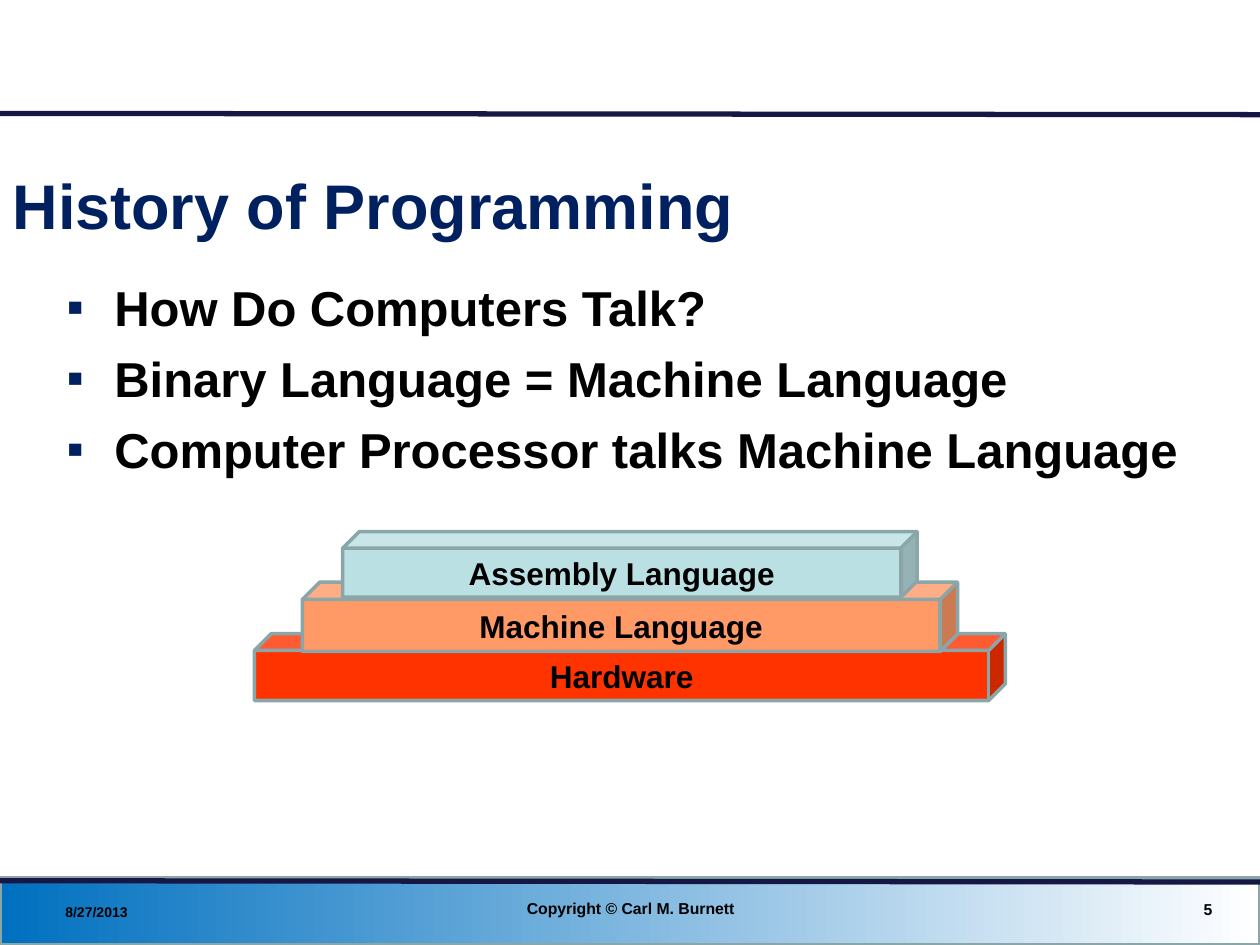
from dataclasses import dataclass

from lxml.etree import SubElement
from pptx import Presentation
from pptx.dml.color import RGBColor as RGB
from pptx.enum.shapes import MSO_CONNECTOR as CONN, MSO_SHAPE as SHAPE
from pptx.enum.text import MSO_ANCHOR as ANCHOR, PP_ALIGN as ALIGN
from pptx.oxml.ns import qn
from pptx.util import Inches, Pt


@dataclass(frozen=True)
class Theme:
    """Colours, font and type sizes of the slide."""
    font: str = "Arial"
    navy: str = "002060"
    rule: str = "171745"
    edge: str = "8AA6A8"
    band: tuple = ("0070C0", "FFFFFF")
    ink: str = "000000"
    title: int = 36
    body: int = 28
    label: int = 18
    footer: int = 9
    date: int = 8


THEME = Theme()
COLS, ROWS = 100, 75
WIDTH, HEIGHT = Inches(10), Inches(7.5)


def grid(x, y, w, h):
    """Turn columns and rows into slide lengths."""
    col, row = WIDTH / COLS, HEIGHT / ROWS
    return int(x * col), int(y * row), int(w * col), int(h * row)


def write(s, *lines, size, color=THEME.ink, align=ALIGN.LEFT,
          anchor=ANCHOR.MIDDLE, bullet=None, gap=0):
    """Fill a shape with bold paragraphs."""
    tf = s.text_frame
    tf.word_wrap = True
    tf.vertical_anchor = anchor
    for i, text in enumerate(lines):
        p = tf.paragraphs[0] if i == 0 else tf.add_paragraph()
        if bullet:
            add_bullet(p, bullet)
        p.alignment = align
        if i:
            p.space_before = Pt(gap)
        r = p.add_run()
        r.text = text
        r.font.name, r.font.size, r.font.bold = THEME.font, Pt(size), True
        r.font.color.rgb = RGB.from_string(color)


def add_bullet(p, char):
    """Give a paragraph a hanging navy bullet."""
    pPr = p._p.get_or_add_pPr()
    pPr.set("marL", str(Inches(0.38)))
    pPr.set("indent", str(-Inches(0.38)))
    clr = SubElement(pPr, qn("a:buClr"))
    SubElement(clr, qn("a:srgbClr"), val=THEME.navy)
    SubElement(pPr, qn("a:buFont"), typeface=THEME.font)
    SubElement(pPr, qn("a:buChar"), char=char)


def add_text(slide, box, *lines, **fmt):
    """Add a text box with formatted paragraphs."""
    write(slide.shapes.add_textbox(*grid(*box)), *lines, **fmt)


def add_solid(slide, kind, box):
    """Add an outlined preset shape without shadow."""
    s = slide.shapes.add_shape(kind, *grid(*box))
    s.shadow.inherit = False
    s.line.color.rgb = RGB.from_string(THEME.edge)
    s.line.width = Pt(2)
    return s


def add_band(slide, box):
    """Add the footer band with its left to right gradient."""
    fill = add_solid(slide, SHAPE.RECTANGLE, box).fill
    fill.gradient()
    fill.gradient_angle = 0
    for stop, color, pos in zip(fill.gradient_stops, THEME.band, (0, 1)):
        stop.color.rgb = RGB.from_string(color)
        stop.position = pos


def add_rule(slide, y):
    """Add a slightly falling rule across the slide."""
    x, top, w, drop = grid(0, y, COLS, 0.1)
    s = slide.shapes.add_connector(CONN.STRAIGHT, x, top, x + w, top + drop)
    s.line.color.rgb = RGB.from_string(THEME.rule)
    s.line.width = Pt(3)
    SubElement(s._element.spPr, qn("a:effectLst"))


def add_layer(slide, text, color, y, w, h):
    """Add one centred block of the language stack."""
    s = add_solid(slide, SHAPE.CUBE, ((COLS - w) / 2, y, w, h))
    s.fill.solid()
    s.fill.fore_color.rgb = RGB.from_string(color)
    write(s, text, size=THEME.label, align=ALIGN.CENTER)


def set_title(slide, box, text):
    """Move and format the title placeholder."""
    s = slide.shapes.title
    s.left, s.top, s.width, s.height = grid(*box)
    write(s, text, size=THEME.title, color=THEME.navy)


def main():
    """Build and save the slide."""
    prs = Presentation()
    prs.slide_width, prs.slide_height = WIDTH, HEIGHT
    slide = prs.slides.add_slide(prs.slide_layouts[5])

    add_band(slide, (0, 69.7, COLS, 5.3))
    for y in (69.9, 9):
        add_rule(slide, y)
    set_title(slide, (0, 11.4, 95.8, 9.7), "History of Programming")
    add_text(slide, (4.3, 21.5, 95.7, 45.5),
             "How Do Computers Talk?",
             "Binary Language = Machine Language",
             "Computer Processor talks Machine Language",
             size=THEME.body, anchor=ANCHOR.TOP, bullet="▪", gap=7)

    add_text(slide, (4.2, 71, 23.3, 2.7), "8/27/2013", size=THEME.date)
    add_text(slide, (73.9, 70.7, 23.3, 2.9), "5",
             size=THEME.footer, align=ALIGN.RIGHT)
    add_text(slide, (34.2, 70.6, 31.7, 2.9), "Copyright © Carl M. Burnett",
             size=THEME.footer, align=ALIGN.CENTER)

    for layer in (("Hardware", "FF3300", 50.3, 59.6, 5.3),
                  ("Machine Language", "FF9966", 46.2, 52, 5.5),
                  ("Assembly Language", "BBE0E3", 42.2, 45.6, 5.2)):
        add_layer(slide, *layer)
    prs.save("out.pptx")


if __name__ == "__main__":
    main()
